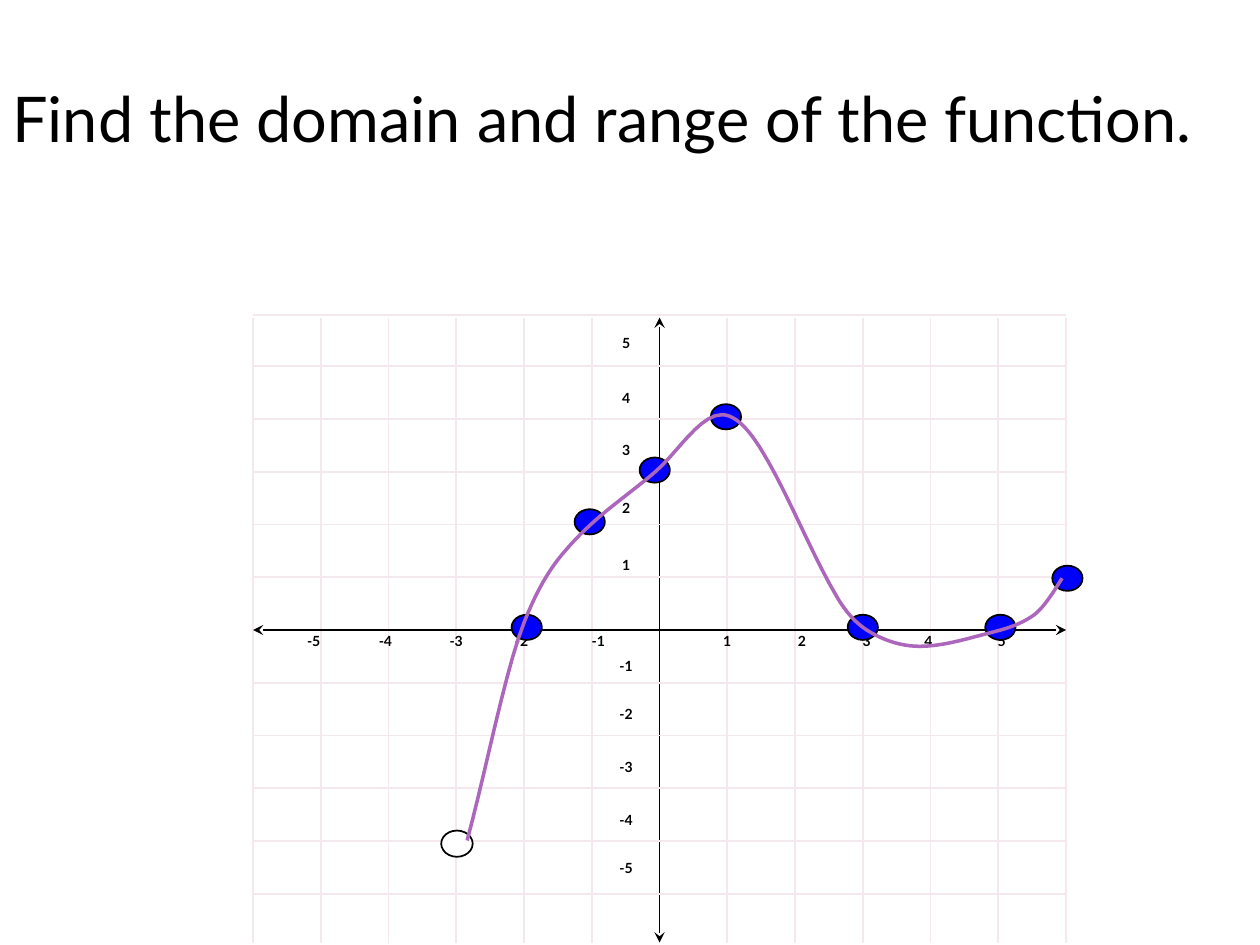
from itertools import pairwise

from lxml import etree
from pptx import Presentation
from pptx.dml.color import RGBColor
from pptx.enum import shapes, text
from pptx.oxml import ns
from pptx.util import Pt

BLACK, WHITE, BLUE = "000000", "FFFFFF", "0000FF"
GRID, PURPLE = "F4E7ED", "AC66BB"
FONT = "Lato"

UNIT_X, UNIT_Y = 38.72, 30.15
COLUMNS, ROWS_UP, ROWS_DOWN = 6, 6, 5

# Labels follow the units; some are nudged by a few points
AXIS_NUMBERS = [number for number in range(-5, 6) if number != 0]
LABEL_WIDTH, LABEL_HEIGHT = 69.4, 45.4
X_LABEL_TOP = -2.2
Y_LABEL_CENTER, Y_LABEL_RISE = -19.1, 20.5
X_NUDGES = {-5: -4, -4: -1.7, -2: -1.4, -1: 3.8, 2: 4, 3: 2.2, 4: -1.2, 5: 1.9}
Y_NUDGES = {5: -0.9, 2: 3, 1: 5.2, -1: 2.5, -5: -2.9}

# Graph coordinates
OPEN_POINT = (-2.99, -4.05)
CLOSED_POINTS = [(-1.96, 0.05), (3, 0.05), (5.03, 0.05), (6.02, 0.98),
                 (0.98, 4.04), (-0.07, 3.03), (-1.03, 2.05)]

# The function's x, y and slope where its bend changes
CURVE_KNOTS = [
    (-2.84, -3.99, 4.75),  # start
    (-2, 0.14, 3.28),
    (-1.44, 1.43, 1.55),
    (-0.07, 2.99, 1.1),
    (0.92, 4.08, 0),  # peak
    (1.48, 3.46, -2.03),
    (2.63, 0.6, -2.14),
    (3.12, -0.05, -0.73),
    (3.84, -0.31, 0),  # trough
    (4.83, -0.07, 0.33),
    (5.5, 0.26, 0.85),
    (5.94, 0.98, 2.09),  # end
]
STEPS_PER_PIECE = 10


def color(hex_string):
    return RGBColor.from_string(hex_string)


def add_text(slide, words, left, top, width, height, size=8, bold=False,
             align=text.PP_ALIGN.LEFT):
    box = slide.shapes.add_textbox(Pt(left), Pt(top), Pt(width), Pt(height))
    frame = box.text_frame
    frame.word_wrap = True
    paragraph = frame.paragraphs[0]
    paragraph.alignment = align
    run = paragraph.add_run()
    run.text = words
    run.font.name = FONT
    run.font.size = Pt(size)
    run.font.bold = bold
    run.font.color.rgb = color(BLACK)


def add_line(slide, x1, y1, x2, y2, axis=False):
    """Draw a grid line, or a black axis with an arrowhead at both ends."""
    line = slide.shapes.add_connector(shapes.MSO_CONNECTOR.STRAIGHT,
                                      Pt(x1), Pt(y1), Pt(x2), Pt(y2))
    line.line.width = Pt(1)
    line.line.color.rgb = color(BLACK if axis else GRID)
    properties = line.line._get_or_add_ln()
    if axis:
        for end in ("a:headEnd", "a:tailEnd"):
            etree.SubElement(properties, ns.qn(end), type="stealth")
    etree.SubElement(properties.getparent(), ns.qn("a:effectLst"))


def draw_grid(slide, left, top, width, height, x0, y0):
    for column in range(-COLUMNS, COLUMNS + 1):
        x = x0 + column * UNIT_X
        add_line(slide, x, top + 1.5, x, top + height, axis=column == 0)
    for row in range(-ROWS_UP, ROWS_DOWN + 1):
        y = max(top, y0 + row * UNIT_Y)
        add_line(slide, left + width, y, left, y, axis=row == 0)


def draw_label(slide, number, center, top):
    add_text(slide, str(number), center - LABEL_WIDTH / 2, top, LABEL_WIDTH,
             LABEL_HEIGHT, bold=True, align=text.PP_ALIGN.CENTER)


def draw_labels(slide, x0, y0):
    for number in AXIS_NUMBERS:
        center = x0 + number * UNIT_X + X_NUDGES.get(number, 0)
        draw_label(slide, number, center, y0 + X_LABEL_TOP)
    for number in reversed(AXIS_NUMBERS):
        top = y0 - number * UNIT_Y - Y_LABEL_RISE + Y_NUDGES.get(number, 0)
        draw_label(slide, number, x0 + Y_LABEL_CENTER, top)


def draw_point(slide, x, y, fill, width=17.3, height=14.4):
    """Draw an ellipse centred on a position given in points."""
    point = slide.shapes.add_shape(
        shapes.MSO_SHAPE.OVAL, Pt(x - width / 2), Pt(y - height / 2),
        Pt(width), Pt(height))
    point.shadow.inherit = False
    point.fill.solid()
    point.fill.fore_color.rgb = color(fill)
    point.line.color.rgb = color(BLACK)
    point.line.width = Pt(1)


def cubic_piece(start, end):
    """Return graph points on the cubic that meets both knots and slopes."""
    (xa, ya, slope_a), (xb, yb, slope_b) = start, end
    run, rise = xb - xa, yb - ya
    bend_a, bend_b = slope_a * run - rise, rise - slope_b * run
    points = []
    for step in range(1, STEPS_PER_PIECE + 1):
        t = step / STEPS_PER_PIECE
        bend = t * (1 - t) * ((1 - t) * bend_a + t * bend_b)
        points.append((xa + t * run, ya + t * rise + bend))
    return points


def draw_curve(slide, x0, y0):
    points = [CURVE_KNOTS[0][:2]]
    for start, end in pairwise(CURVE_KNOTS):
        points += cubic_piece(start, end)
    places = [(Pt(x0 + x * UNIT_X), Pt(y0 - y * UNIT_Y)) for x, y in points]
    builder = slide.shapes.build_freeform(*places[0])
    builder.add_line_segments(places[1:], close=False)
    curve = builder.convert_to_shape()
    curve.shadow.inherit = False
    curve.fill.background()
    curve.line.color.rgb = color(PURPLE)
    curve.line.width = Pt(2)


def draw_graph(slide, left, top, width, height):
    x0, y0 = left + width / 2, top + 180
    draw_grid(slide, left, top, width, height, x0, y0)
    draw_labels(slide, x0, y0)
    x, y = OPEN_POINT
    draw_point(slide, x0 + x * UNIT_X, y0 - y * UNIT_Y, WHITE, 18, 15)
    for x, y in CLOSED_POINTS:
        draw_point(slide, x0 + x * UNIT_X, y0 - y * UNIT_Y, BLUE)
    draw_curve(slide, x0, y0)


def main():
    presentation = Presentation()
    presentation.slide_width, presentation.slide_height = Pt(720), Pt(540)
    slide = presentation.slides.add_slide(presentation.slide_layouts[6])
    add_text(slide, "Find the domain and range of the function.",
             0, 41.8, 720, 102.2, size=36)
    draw_graph(slide, 144.6, 180, 464.6, 358.6)
    presentation.save("out.pptx")


if __name__ == "__main__":
    main()
